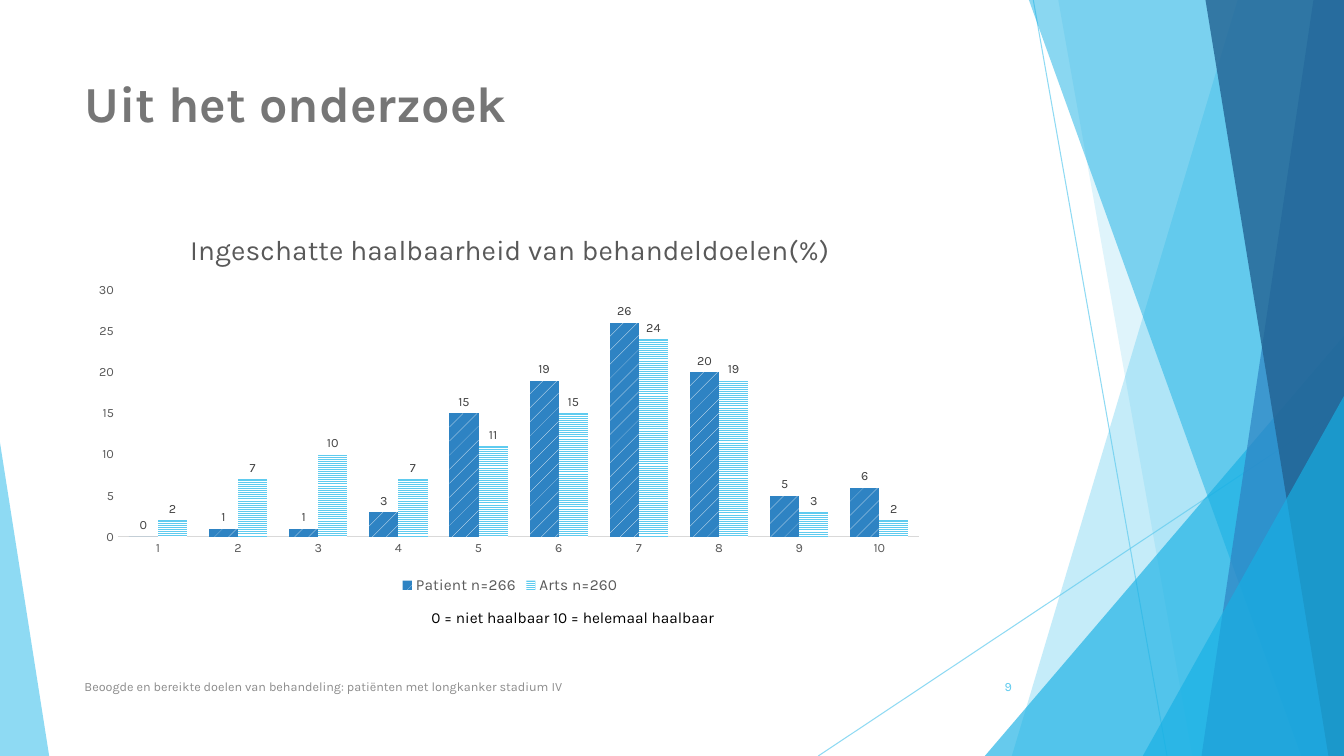
import pptx
import pptx.chart.data
import pptx.dml.color
import pptx.enum.chart
import pptx.enum.dml
import pptx.enum.shapes
import pptx.enum.text
import pptx.oxml
import pptx.oxml.ns
import pptx.util

Cm = pptx.util.Cm
Pt = pptx.util.Pt
RGBColor = pptx.dml.color.RGBColor
Align = pptx.enum.text.PP_ALIGN
Anchor = pptx.enum.text.MSO_ANCHOR
Pattern = pptx.enum.dml.MSO_PATTERN
AxisTick = pptx.enum.chart.XL_TICK_MARK

SKY = RGBColor(0x5F, 0xCB, 0xEF)
CYAN = RGBColor(0x17, 0xB0, 0xE4)
BLUE = RGBColor(0x2E, 0x83, 0xC3)
NAVY = RGBColor(0x22, 0x62, 0x92)
WHITE = RGBColor(0xFF, 0xFF, 0xFF)
BLACK = RGBColor(0x00, 0x00, 0x00)
TITLE_GREY = RGBColor(0x76, 0x76, 0x76)
FOOTER_GREY = RGBColor(0x8C, 0x8C, 0x8C)
CHART_GREY = RGBColor(0x59, 0x59, 0x59)
LABEL_GREY = RGBColor(0x40, 0x40, 0x40)
AXIS_GREY = RGBColor(0xD9, 0xD9, 0xD9)
WIDTH, HEIGHT = 33.87, 19.05


def apply(target, **values):
    for name, value in values.items():
        setattr(target, name, value)


class PageBuilder:
    font_name = "Karla"

    def __init__(self, page):
        self.page = page
        self.shapes = page.shapes

    def style_font(self, font, size, color, bold=False):
        apply(font, name=self.font_name, size=Pt(size), bold=bold)
        font.color.rgb = color

    def set_alpha(self, element, percent):
        color = element.find(".//" + pptx.oxml.ns.qn("a:srgbClr"))
        alpha = color.makeelement(pptx.oxml.ns.qn("a:alpha"), {"val": str(percent * 1000)})
        color.append(alpha)

    def paint(self, shape, color, percent):
        shape.shadow.inherit = False
        shape.fill.solid()
        shape.fill.fore_color.rgb = color
        self.set_alpha(shape.fill._xPr, percent)
        shape.line.fill.background()

    def line(self, start, end):
        kind = pptx.enum.shapes.MSO_CONNECTOR.STRAIGHT
        connector = self.shapes.add_connector(kind, *map(Cm, start + end))
        connector.line.width = Pt(0.75)
        connector.line.color.rgb = SKY
        properties = connector._element.spPr
        self.set_alpha(properties, 70)
        properties.append(properties.makeelement(pptx.oxml.ns.qn("a:effectLst"), {}))

    def band(self, top_left, bottom_left, color, percent):
        builder = self.shapes.build_freeform(Cm(top_left), 0)
        corners = [(WIDTH, 0), (WIDTH, HEIGHT), (bottom_left, HEIGHT)]
        builder.add_line_segments([(Cm(x), Cm(y)) for x, y in corners])
        self.paint(builder.convert_to_shape(), color, percent)

    def triangle(self, left, top, width, peak, color, percent):
        kind = pptx.enum.shapes.MSO_SHAPE.ISOSCELES_TRIANGLE
        shape = self.shapes.add_shape(kind, *map(Cm, (left, top, width, HEIGHT - top)))
        shape.adjustments[0] = peak
        self.paint(shape, color, percent)

    def fill_text(self, frame, text, size, color, align, bold=False):
        para = frame.paragraphs[0]
        para.alignment = align
        span = para.add_run()
        span.text = text
        self.style_font(span.font, size, color, bold)

    def text(self, text, place, size, color, align=Align.LEFT, anchor=Anchor.MIDDLE):
        frame = self.shapes.add_textbox(*map(Cm, place)).text_frame
        apply(frame, word_wrap=True, vertical_anchor=anchor)
        self.fill_text(frame, text, size, color, align)

    def title(self, text, place):
        box = self.shapes.title
        for name, value in zip(("left", "top", "width", "height"), place):
            setattr(box, name, Cm(value))
        apply(box.text_frame, word_wrap=True, vertical_anchor=Anchor.TOP)
        self.fill_text(box.text_frame, text, 36, TITLE_GREY, Align.LEFT, bold=True)

    def place_plot(self, chart, **fractions):
        values = {"layoutTarget": "inner", "xMode": "edge", "yMode": "edge", **fractions}
        parts = "".join(f'<c:{name} val="{value}"/>' for name, value in values.items())
        layout = pptx.oxml.parse_xml(
            f'<c:layout {pptx.oxml.ns.nsdecls("c")}>'
            f"<c:manualLayout>{parts}</c:manualLayout></c:layout>"
        )
        area = chart._chartSpace.chart.plotArea
        for old in area.findall(pptx.oxml.ns.qn("c:layout")):
            area.remove(old)
        area.insert(0, layout)

    def axis(self, axis):
        apply(axis, major_tick_mark=AxisTick.NONE, minor_tick_mark=AxisTick.NONE,
              has_major_gridlines=False)
        self.style_font(axis.tick_labels.font, 9, CHART_GREY)

    def column_chart(self, title, categories, series, place):
        data = pptx.chart.data.CategoryChartData(number_format="0")
        data.categories = categories
        for name, values, _, _ in series:
            data.add_series(name, values)
        kind = pptx.enum.chart.XL_CHART_TYPE.COLUMN_CLUSTERED
        chart = self.shapes.add_chart(kind, *map(Cm, place), data).chart
        self.style_font(chart.font, 10, BLACK)
        apply(chart, has_title=True, has_legend=True)
        self.fill_text(chart.chart_title.text_frame, title, 20, CHART_GREY, Align.CENTER)
        apply(chart.legend, position=pptx.enum.chart.XL_LEGEND_POSITION.BOTTOM,
              include_in_layout=False)
        self.style_font(chart.legend.font, 11, CHART_GREY)
        self.axis(chart.category_axis)
        self.axis(chart.value_axis)
        chart.category_axis.format.line.color.rgb = AXIS_GREY
        chart.category_axis.format.line.width = Pt(0.75)
        chart.value_axis.format.line.fill.background()
        apply(chart.value_axis, minimum_scale=0, maximum_scale=30, major_unit=5)
        plot = chart.plots[0]
        apply(plot, gap_width=75, overlap=0, vary_by_categories=False)
        for column, (_, _, pattern, color) in zip(plot.series, series):
            fill = column.format.fill
            fill.patterned()
            fill.pattern = pattern
            fill.fore_color.rgb = WHITE
            fill.back_color.rgb = color
            labels = column.data_labels
            apply(labels, show_value=True, number_format="0", number_format_is_linked=False,
                  position=pptx.enum.chart.XL_LABEL_POSITION.OUTSIDE_END)
            self.style_font(labels.font, 9, LABEL_GREY)
        self.place_plot(chart, x=0.04, y=0.2, w=0.94, h=0.64)


def main():
    deck = pptx.Presentation()
    apply(deck, slide_width=Cm(WIDTH), slide_height=Cm(HEIGHT))
    builder = PageBuilder(deck.slides.add_slide(deck.slide_layouts[5]))

    builder.line((26.04, 0), (29.41, HEIGHT))
    builder.line((WIDTH, 10.24), (20.62, HEIGHT))
    builder.band(31.19, 25.5, SKY, 36)
    builder.band(26.67, 30.05, SKY, 20)
    builder.triangle(24.82, 8.46, 9.05, 1, CYAN, 66)
    builder.band(25.93, 32.79, CYAN, 50)
    builder.band(33.1, 30.28, BLUE, 70)
    builder.band(30.38, 33.48, NAVY, 80)
    builder.triangle(28.8, 9.98, 5.07, 1, CYAN, 66)
    builder.triangle(0, 11.15, 1.24, 0, SKY, 70)

    builder.text("Beoogde en bereikte doelen van behandeling: patiënten met longkanker stadium IV",
                 (1.88, 16.79, 17.5, 1.02), 9, FOOTER_GREY)
    builder.text("9", (23.85, 16.79, 1.9, 1.02), 9, SKY, align=Align.RIGHT)
    builder.column_chart(
        "Ingeschatte haalbaarheid van behandeldoelen(%)",
        [str(score) for score in range(1, 11)],
        [
            ("Patient n=266", (0, 1, 1, 3, 15, 19, 26, 20, 5, 6), Pattern.PERCENT_5, BLUE),
            ("Arts n=260", (2, 7, 10, 7, 11, 15, 24, 19, 3, 2), Pattern.LIGHT_HORIZONTAL, SKY),
        ],
        (2.11, 5.36, 21.49, 9.73),
    )
    builder.text("0 = niet haalbaar 10 = helemaal haalbaar", (10.62, 15.21, 8.74, 0.74),
                 11, BLACK, anchor=Anchor.TOP)
    builder.title("Uit het onderzoek", (1.88, 1.7, 23.88, 3.66))

    deck.save("out.pptx")


if __name__ == "__main__":
    main()
